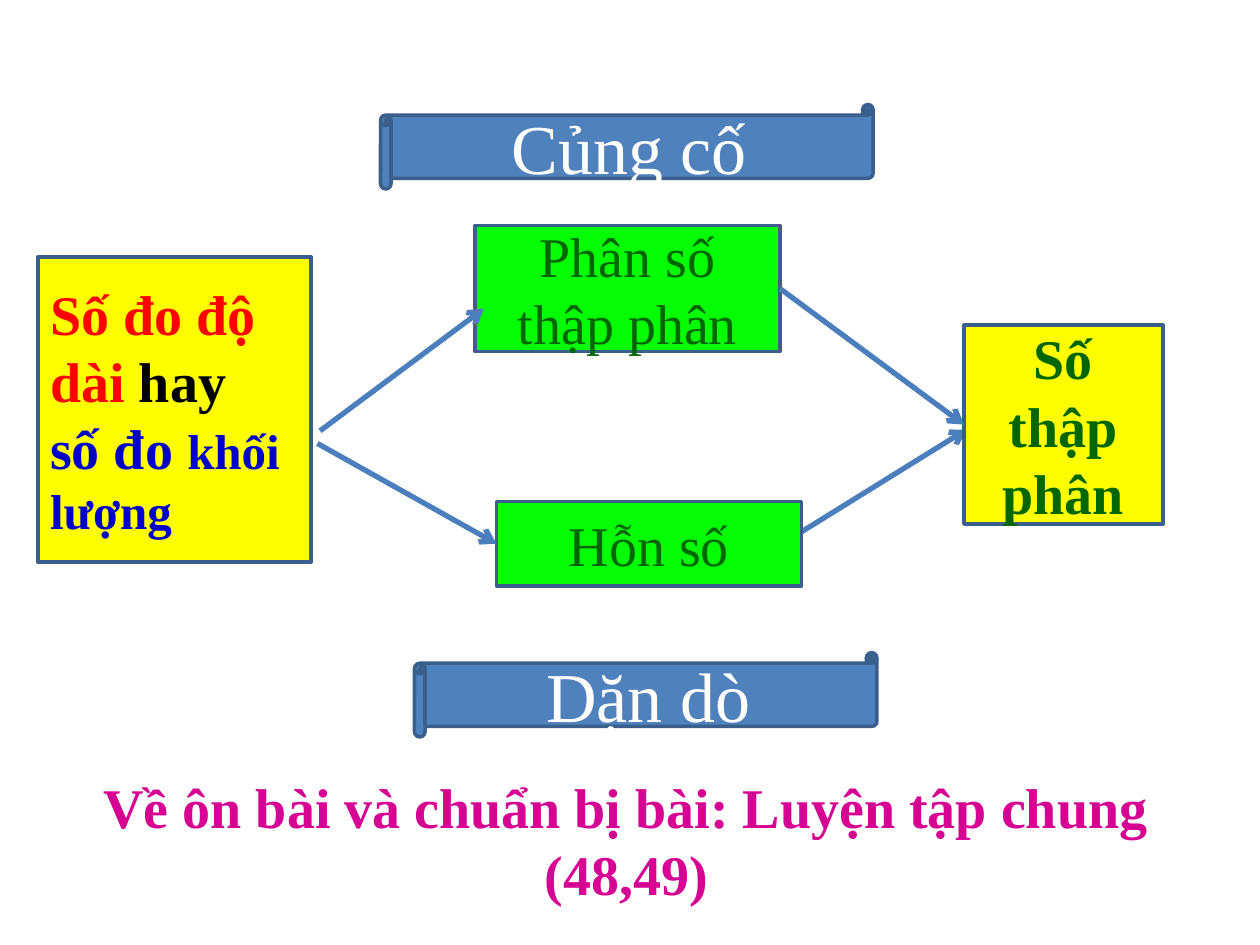
from dataclasses import dataclass

from lxml.etree import SubElement
from pptx import Presentation
from pptx.dml.color import RGBColor as RGB
from pptx.enum.shapes import MSO_CONNECTOR as Connector, MSO_SHAPE as Shape
from pptx.enum.text import MSO_ANCHOR as Anchor, PP_ALIGN as Align
from pptx.oxml.ns import qn
from pptx.util import Inches, Pt


@dataclass(frozen=True)
class Theme:
    font: str = "Times New Roman"
    banner: str = "4F81BD"
    outline: str = "3A5F8C"
    arrow: str = "4B7EBC"
    yellow: str = "FFFF00"
    lime: str = "04FC04"
    white: str = "FFFFFF"
    black: str = "000000"
    red: str = "FF0000"
    blue: str = "0000CC"
    green: str = "006600"
    magenta: str = "D60093"
    heading: int = 40
    body: int = 32
    small: int = 28
    outline_width: int = 2
    arrow_width: int = 3


LEFT, RIGHT = 1, 3


class SlideBuilder:
    def __init__(self, slide, theme):
        self.slide = slide
        self.theme = theme

    def add_text(self, frame, paragraphs, bold=False, align=Align.CENTER):
        frame.word_wrap = True
        for index, runs in enumerate(paragraphs):
            paragraph = frame.add_paragraph() if index else frame.paragraphs[0]
            paragraph.alignment = align
            for text, color, size in runs:
                run = paragraph.add_run()
                run.text = text
                run.font.name = self.theme.font
                run.font.size = Pt(size)
                run.font.bold = bold
                run.font.color.rgb = RGB.from_string(color)

    def block(self, kind, bounds, fill, paragraphs, **style):
        shape = self.slide.shapes.add_shape(kind, *map(Inches, bounds))
        shape.shadow.inherit = False
        shape.fill.solid()
        shape.fill.fore_color.rgb = RGB.from_string(fill)
        shape.line.color.rgb = RGB.from_string(self.theme.outline)
        shape.line.width = Pt(self.theme.outline_width)
        shape.text_frame.vertical_anchor = Anchor.MIDDLE
        self.add_text(shape.text_frame, paragraphs, **style)
        return shape

    def banner(self, bounds, title):
        runs = [(title, self.theme.white, self.theme.heading)]
        return self.block(Shape.HORIZONTAL_SCROLL, bounds, self.theme.banner, [runs])

    def box(self, bounds, fill, paragraphs, **style):
        return self.block(Shape.RECTANGLE, bounds, fill, paragraphs, **style)

    def note(self, bounds, text, color):
        note = self.slide.shapes.add_textbox(*map(Inches, bounds))
        self.add_text(note.text_frame, [[(text, color, self.theme.body)]], bold=True)

    def arrow(self, start, end, source=None, target=None):
        arrow = self.slide.shapes.add_connector(
            Connector.STRAIGHT, *map(Inches, (*start, *end)))
        if source:
            arrow.begin_connect(source, RIGHT)
        if target:
            arrow.end_connect(target, LEFT)
        arrow.line.color.rgb = RGB.from_string(self.theme.arrow)
        arrow.line.width = Pt(self.theme.arrow_width)
        properties = arrow._element.spPr
        SubElement(properties.find(qn("a:ln")), qn("a:tailEnd"), type="arrow")
        SubElement(properties, qn("a:effectLst"))


def main():
    deck = Presentation()
    deck.slide_width, deck.slide_height = Inches(10), Inches(7.5)
    theme = Theme()
    page = SlideBuilder(deck.slides.add_slide(deck.slide_layouts[6]), theme)

    page.arrow((6.25, 4.29), (7.67, 3.41))
    page.banner((3.02, 0.83, 3.91, 0.67), "Củng cố")
    page.banner((3.29, 5.18, 3.67, 0.67), "Dặn dò")
    page.note((0.18, 6.08, 9.58, 1.18),
              "Về ôn bài và chuẩn bị bài: Luyện tập chung (48,49)", theme.magenta)

    page.box((0.3, 2.04, 2.17, 2.42), theme.yellow, [
        [("Số đo độ dài ", theme.red, theme.body), ("hay", theme.black, theme.body)],
        [("số đo ", theme.blue, theme.body), ("khối lượng", theme.blue, theme.small)],
    ], bold=True, align=Align.LEFT)
    fraction = page.box((3.77, 1.79, 2.42, 1), theme.lime,
                        [[("Phân số thập phân", theme.green, theme.body)]])
    decimal = page.box((7.65, 2.58, 1.58, 1.58), theme.yellow,
                       [[("Số thập phân", theme.green, theme.body)]], bold=True)
    mixed = page.box((3.94, 3.98, 2.42, 0.67), theme.lime,
                     [[("Hỗn số", theme.green, theme.body)]])

    page.arrow((2.54, 3.42), (3.84, 2.45))
    page.arrow((6.18, 2.29), (7.65, 3.37), source=fraction, target=decimal)
    page.arrow((2.52, 3.52), (3.94, 4.32), target=mixed)

    deck.save("out.pptx")


if __name__ == "__main__":
    main()
